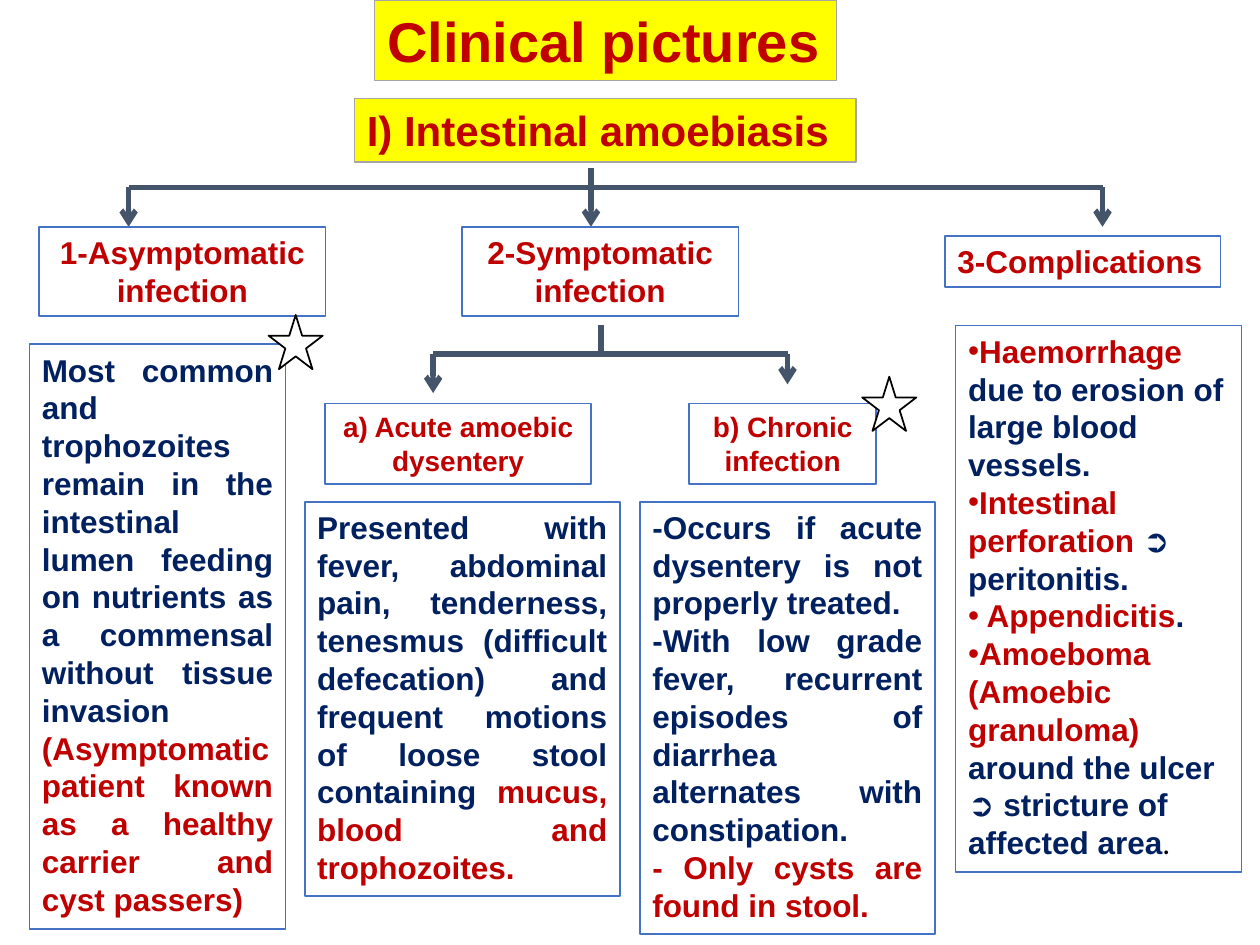
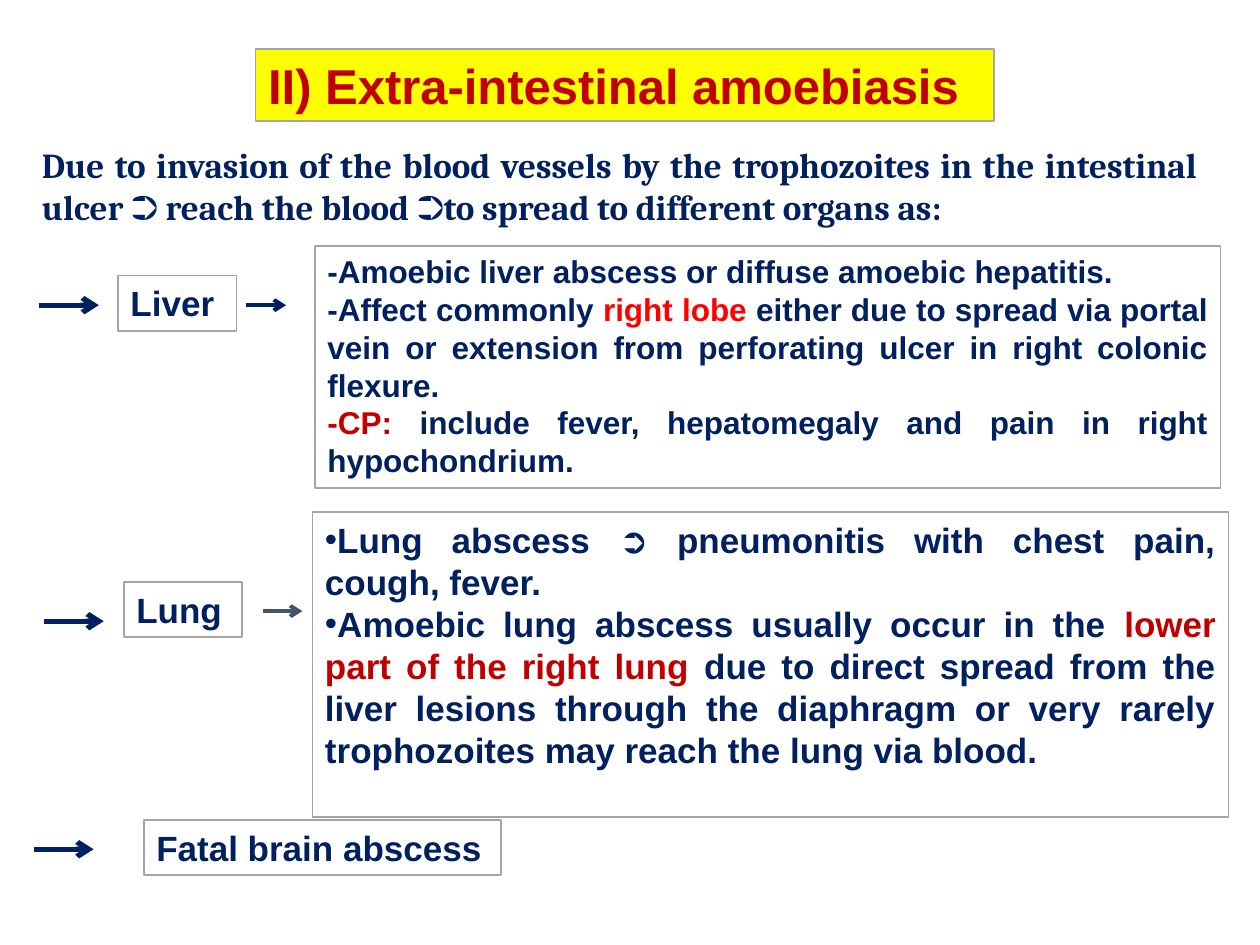
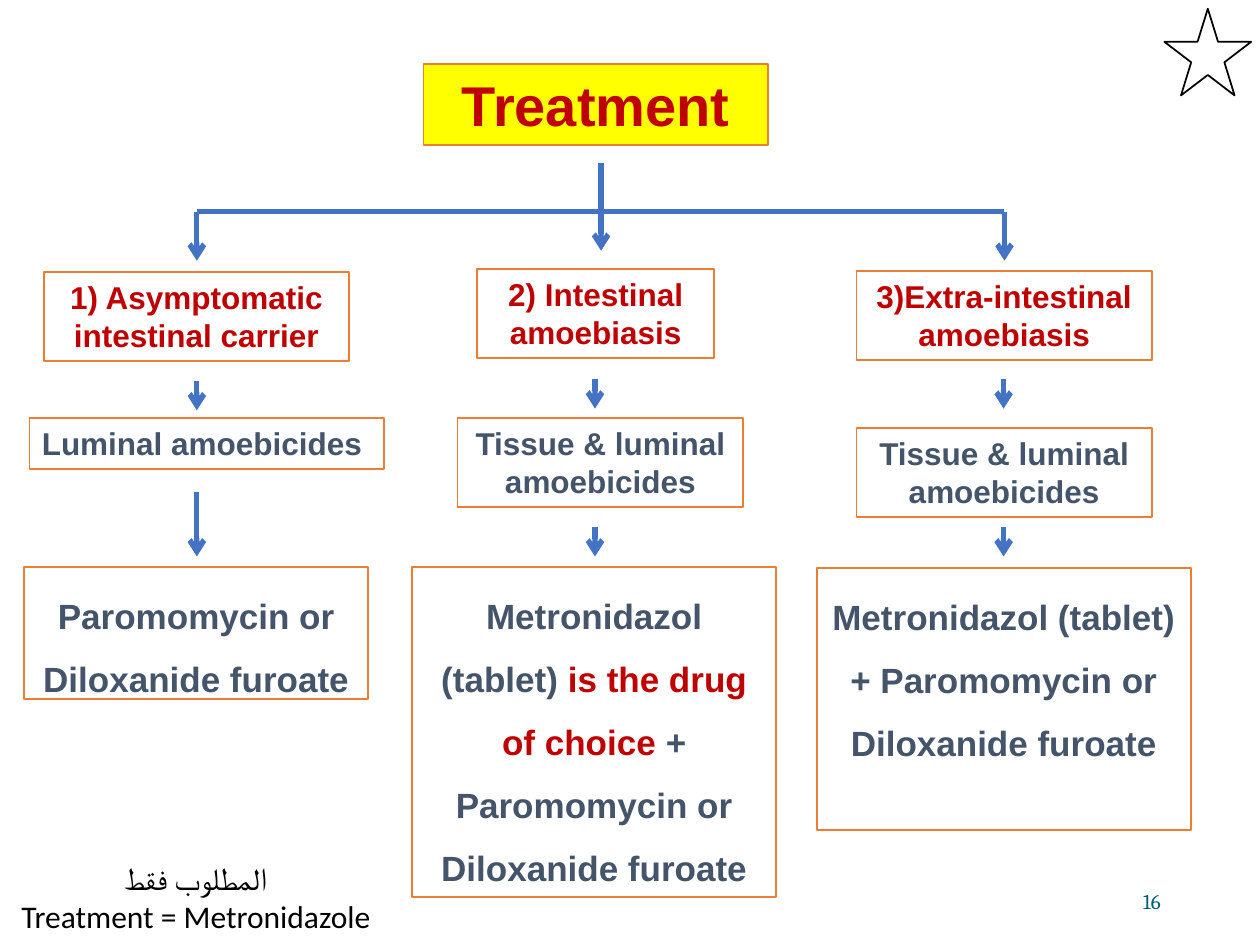
from pptx import Presentation
from pptx.dml.color import RGBColor
from pptx.enum.shapes import MSO_CONNECTOR, MSO_SHAPE
from pptx.enum.text import MSO_ANCHOR, MSO_AUTO_SIZE, PP_ALIGN
from pptx.oxml.ns import qn
from pptx.util import Pt
from lxml.etree import SubElement

WHITE = RGBColor(0xFF, 0xFF, 0xFF)
BLACK = RGBColor(0x00, 0x00, 0x00)
YELLOW = RGBColor(0xFF, 0xFF, 0x00)
CRIMSON = RGBColor(0xC0, 0x00, 0x00)
RED = RGBColor(0xFF, 0x00, 0x00)
NAVY = RGBColor(0x00, 0x20, 0x60)
SLATE = RGBColor(0x44, 0x54, 0x6A)
BLUE = RGBColor(0x44, 0x72, 0xC4)
ORANGE = RGBColor(0xED, 0x7D, 0x31)
GREY = RGBColor(0xA5, 0xA5, 0xA5)
TEAL = RGBColor(0x04, 0x5C, 0x75)

LEFT, CENTER, RIGHT, JUSTIFY = PP_ALIGN.LEFT, PP_ALIGN.CENTER, PP_ALIGN.RIGHT, PP_ALIGN.JUSTIFY
TITLE_AND_BODY, TITLE_ONLY = 1, 5


def write_box(box, frame, paragraphs, size, color, outline=None, fill=WHITE,
              align=LEFT, font="Arial", bold=True, spacing=1.0):
    """Place a box and write paragraphs, each a list of (text, color or None) spans."""
    box.left, box.top, box.width, box.height = map(Pt, frame)
    if outline is not None:
        box.fill.solid()
        box.fill.fore_color.rgb = fill
        box.line.color.rgb = outline
        box.line.width = Pt(1)
    text = box.text_frame
    text.word_wrap = True
    text.auto_size = MSO_AUTO_SIZE.NONE
    text.vertical_anchor = MSO_ANCHOR.TOP
    for index, spans in enumerate(paragraphs):
        para = text.add_paragraph() if index else text.paragraphs[0]
        para.alignment = align
        para.line_spacing = spacing
        para.space_before = Pt(0)
        para.font.name, para.font.size, para.font.bold = font, Pt(size), bold
        para.font.color.rgb = color
        for words, span_color in spans:
            span = para.add_run()
            span.text = words
            if span_color is not None:
                span.font.color.rgb = span_color


def draw_line(page, start, end, color, width=3, arrow=False):
    line = page.shapes.add_connector(MSO_CONNECTOR.STRAIGHT, *map(Pt, start + end))
    line.line.color.rgb = color
    line.line.width = Pt(width)
    if arrow:
        SubElement(line.line._get_or_add_ln(), qn("a:tailEnd"), type="arrow")
    SubElement(line._element.spPr, qn("a:effectLst"))


deck = Presentation()
deck.slide_width, deck.slide_height = Pt(720), Pt(540)
clinical, extra, treatment = [
    deck.slides.add_slide(deck.slide_layouts[layout])
    for layout in (TITLE_AND_BODY, TITLE_AND_BODY, TITLE_ONLY)
]

# Titles
for page, words, frame, size, outline, align in [
    (clinical, "Clinical pictures", (214, 0, 264, 46), 32, GREY, LEFT),
    (extra, "II) Extra-intestinal amoebiasis", (146, 28, 422, 41), 28, GREY, LEFT),
    (treatment, "Treatment", (242, 36.7, 197, 46), 32, ORANGE, CENTER),
]:
    write_box(page.shapes.title, frame, [[(words, None)]], size, CRIMSON, outline, YELLOW, align)

# Bulleted lists
for page, frame, size, outline, align, items in [
    (clinical, (546, 186, 163.5, 312.5), 18, BLUE, LEFT, [
        [("Haemorrhage", CRIMSON), (" due to erosion of large blood vessels.", None)],
        [("Intestinal perforation ", CRIMSON), ("➲ peritonitis.", None)],
        [(" Appendicitis", CRIMSON), (".", None)],
        [("Amoeboma (Amoebic granuloma) ", CRIMSON),
         ("around the ulcer ➲ stricture of affected area", None), (".", BLACK)],
    ]),
    (extra, (178.5, 292.5, 523.5, 174.5), 20, GREY, JUSTIFY, [
        [("Lung abscess ➲ pneumonitis with chest pain, cough, fever.", None)],
        [("Amoebic lung abscess usually occur in the ", None),
         ("lower part of the right lung ", CRIMSON),
         ("due to direct spread from the liver lesions through the diaphragm or very "
          "rarely trophozoites may reach the lung via blood.", None)],
    ]),
]:
    body = page.placeholders[1]
    write_box(body, frame, items, size, NAVY, outline, align=align)
    for para in body.text_frame.paragraphs:
        para._p.pPr.set("marL", "0")
        para._p.pPr.set("indent", "0")
full_stop = clinical.placeholders[1].text_frame.paragraphs[-1].runs[-1]
full_stop.font.name, full_stop.font.bold = "Calibri", False

# Branching lines: stem, crossbar and one arrow per branch
for page, color, stem_x, stem_top, bar_y, branches in [
    (clinical, SLATE, 337.7, 96, 107, [(73.5, 129.6), (337.7, 129.6), (630, 129.6)]),
    (clinical, SLATE, 343.5, 186, 202.3, [(247.5, 224.6), (450, 219.6)]),
    (treatment, BLUE, 343.5, 93, 121, [(112.5, 149), (343.5, 143.3), (574, 149)]),
]:
    draw_line(page, (stem_x, stem_top), (stem_x, bar_y), color)
    draw_line(page, (branches[0][0], bar_y), (branches[-1][0], bar_y), color)
    for x, tip in branches:
        draw_line(page, (x, bar_y), (x, tip), color, arrow=True)

# Clinical pictures: headings and descriptions
write_box(clinical.shapes.add_textbox(0, 0, 0, 0), (202.5, 56.3, 286.5, 36.4),
          [[("I) Intestinal amoebiasis", None)]], 24, CRIMSON, GREY, YELLOW)
for words, frame, size, align in [
    ("1-Asymptomatic infection", (22.5, 129.6, 163.5, 51), 18, CENTER),
    ("2-Symptomatic infection", (264, 129.6, 158, 51), 18, CENTER),
    ("3-Complications", (540, 135, 157.5, 29), 18, LEFT),
    ("a) Acute amoebic dysentery", (185.8, 230.5, 152, 46), 16, CENTER),
    ("b) Chronic infection", (393.8, 230.5, 107, 46), 16, CENTER),
]:
    write_box(clinical.shapes.add_textbox(0, 0, 0, 0), frame, [[(words, None)]],
              size, CRIMSON, BLUE, align=align)
for frame, paragraphs in [
    ((16.8, 196.8, 146.4, 334.2), [
        [("Most common and trophozoites remain in the intestinal lumen feeding on "
          "nutrients as a commensal without tissue invasion ", None),
         ("(Asymptomatic patient known as a healthy carrier and cyst passers)", CRIMSON)],
    ]),
    ((174.2, 286.7, 180, 225.4), [
        [("Presented with fever, abdominal pain, tenderness, tenesmus (difficult "
          "defecation) and frequent motions of loose stool containing ", None),
         ("mucus, blood and trophozoites.", CRIMSON)],
    ]),
    ((365.7, 286.7, 168.5, 247), [
        [("-Occurs if acute dysentery is not properly treated.", None)],
        [("-With low grade fever, recurrent episodes of diarrhea alternates with "
          "constipation.", None)],
        [("- Only cysts are found in stool.", CRIMSON)],
    ]),
]:
    write_box(clinical.shapes.add_textbox(0, 0, 0, 0), frame, paragraphs, 18, NAVY, BLUE,
              align=JUSTIFY)

# Extra-intestinal amoebiasis: introduction, organs and arrows
write_box(extra.shapes.add_textbox(0, 0, 0, 0), (16.8, 78.7, 675, 55.7), [
    [("Due to invasion of the blood vessels by the trophozoites in the intestinal ulcer "
      "➲ reach the blood ➲to spread to different organs as:", None)],
], 20, NAVY, align=JUSTIFY, font="Cambria")
for organ, frame in [
    ("Liver", (67.5, 157.5, 67.7, 31.5)),
    ("Lung", (70.8, 332.6, 67.7, 31.5)),
    ("Fatal brain abscess", (82.2, 468.6, 204.3, 31.5)),
]:
    write_box(extra.shapes.add_textbox(0, 0, 0, 0), frame, [[(organ, None)]], 20, NAVY, GREY)
write_box(extra.shapes.add_textbox(0, 0, 0, 0), (180, 140.6, 517.5, 138.4), [
    [("-Amoebic liver abscess or diffuse amoebic hepatitis.", None)],
    [("-Affect commonly ", None), ("right lobe ", RED),
     ("either due to spread via portal vein or extension from perforating ulcer in right "
      "colonic flexure.", None)],
    [("-CP:", CRIMSON),
     (" include fever, hepatomegaly and pain in right hypochondrium.", None)],
], 18, NAVY, GREY, align=JUSTIFY)
for x, y, length, color, width in [
    (22.5, 174.4, 34, NAVY, 3),
    (140.5, 174.4, 23, NAVY, 2.25),
    (25.3, 355, 34, NAVY, 3),
    (150.3, 349.2, 22.5, SLATE, 2.25),
    (19.5, 485.3, 34, NAVY, 3),
]:
    draw_line(extra, (x, y), (x + length, y), color, width, arrow=True)

# Treatment: one column per condition, from patient group to drug
for words, frame, color, align in [
    ("1) Asymptomatic intestinal carrier", (25, 155.4, 174.5, 51), CRIMSON, CENTER),
    ("2) Intestinal amoebiasis", (272.7, 153.7, 135.5, 51), CRIMSON, CENTER),
    ("3)Extra-intestinal amoebiasis", (489.4, 154.8, 168.8, 51), CRIMSON, CENTER),
    ("Luminal amoebicides", (16.8, 238.9, 202.6, 29), SLATE, LEFT),
    ("Tissue & luminal amoebicides", (261.5, 238.9, 163.2, 51), SLATE, CENTER),
    ("Tissue & luminal amoebicides", (489.4, 244.6, 168.8, 51), SLATE, CENTER),
]:
    write_box(treatment.shapes.add_textbox(0, 0, 0, 0), frame, [[(words, None)]],
              18, color, ORANGE, align=align)
for frame, spans in [
    ((13.7, 324, 196.8, 75.4), [("Paromomycin or Diloxanide furoate", None)]),
    ((235.4, 324, 208.3, 188.8), [
        ("Metronidazol (tablet) ", None), ("is the drug of choice ", CRIMSON),
        ("+ Paromomycin or Diloxanide furoate", None)]),
    ((466.7, 324.7, 213.8, 149.4), [
        ("Metronidazol (tablet) + Paromomycin or Diloxanide furoate", None)]),
]:
    write_box(treatment.shapes.add_textbox(0, 0, 0, 0), frame, [spans], 20, SLATE, ORANGE,
              align=CENTER, spacing=1.5)
for x, steps in [
    (112.5, [(217.5, 234.5), (281, 318)]),
    (340, [(216.5, 233.5), (301, 318)]),
    (573.5, [(216.5, 233.5), (301, 318)]),
]:
    for top, tip in steps:
        draw_line(treatment, (x, top), (x, tip), BLUE, arrow=True)

summary = treatment.shapes.add_textbox(0, 0, 0, 0)
write_box(summary, (3.6, 487.6, 216.7, 51),
          [[("المطلوب فقط", None)], [("Treatment = Metronidazole", None)]],
          18, BLACK, align=CENTER, font="Calibri", bold=False)
summary.text_frame.word_wrap = False
summary.text_frame.paragraphs[0]._p.pPr.set("rtl", "1")

page_number = treatment.shapes.add_textbox(0, 0, 0, 0)
write_box(page_number, (508.3, 500.5, 162, 28.8), [[("16", None)]], 12, TEAL,
          align=RIGHT, font="Cambria", bold=False)
page_number.text_frame.vertical_anchor = MSO_ANCHOR.MIDDLE

# Stars mark the key points
for page, left, top, side in [
    (clinical, 153.5, 180, 31),
    (clinical, 492.7, 215.3, 31),
    (treatment, 665.4, 5, 49.6),
]:
    star = page.shapes.add_shape(MSO_SHAPE.STAR_5_POINT, *map(Pt, (left, top, side, side)))
    star.shadow.inherit = False
    star.fill.solid()
    star.fill.fore_color.rgb = WHITE
    star.line.color.rgb = BLACK
    star.line.width = Pt(1)

deck.save("out.pptx")
